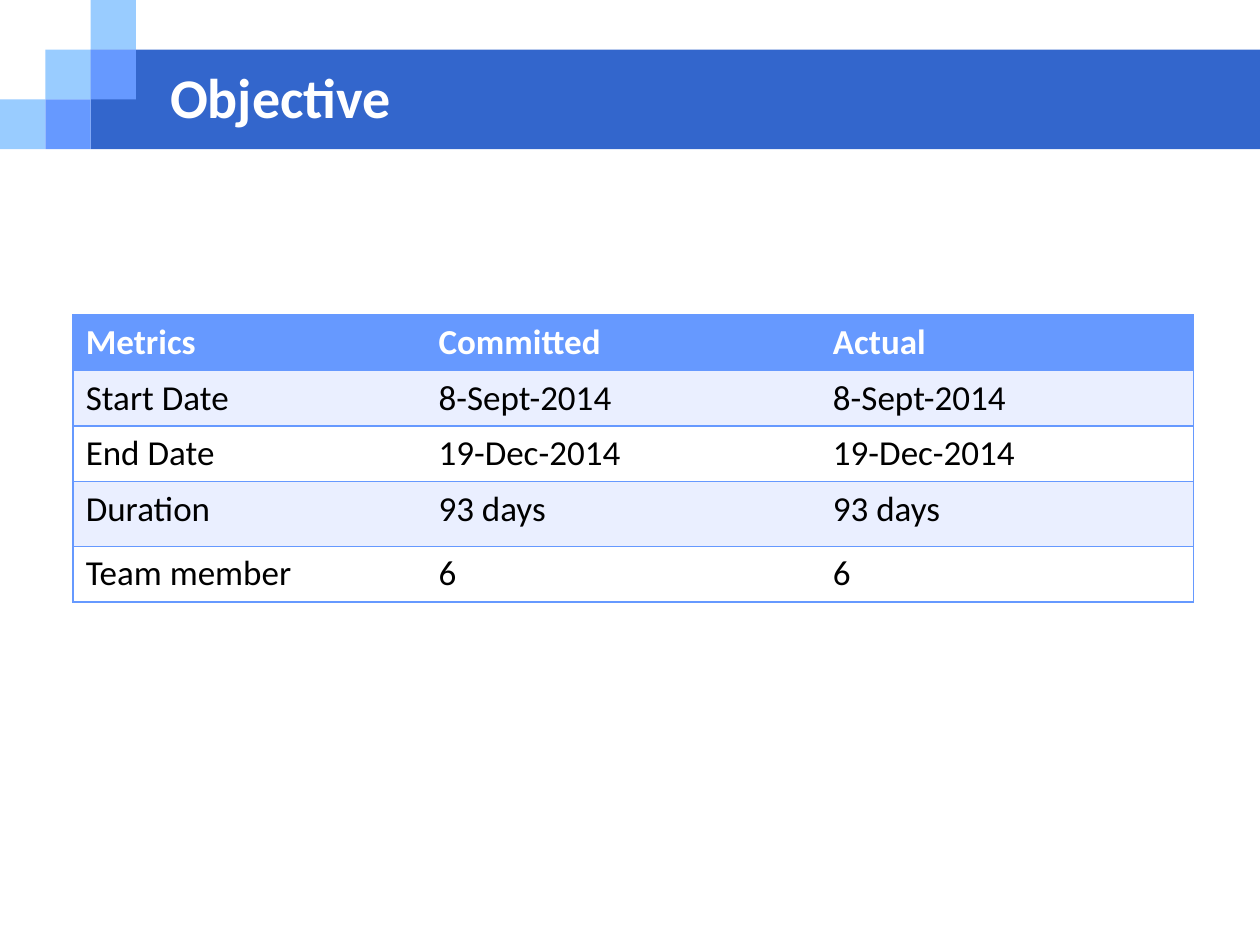
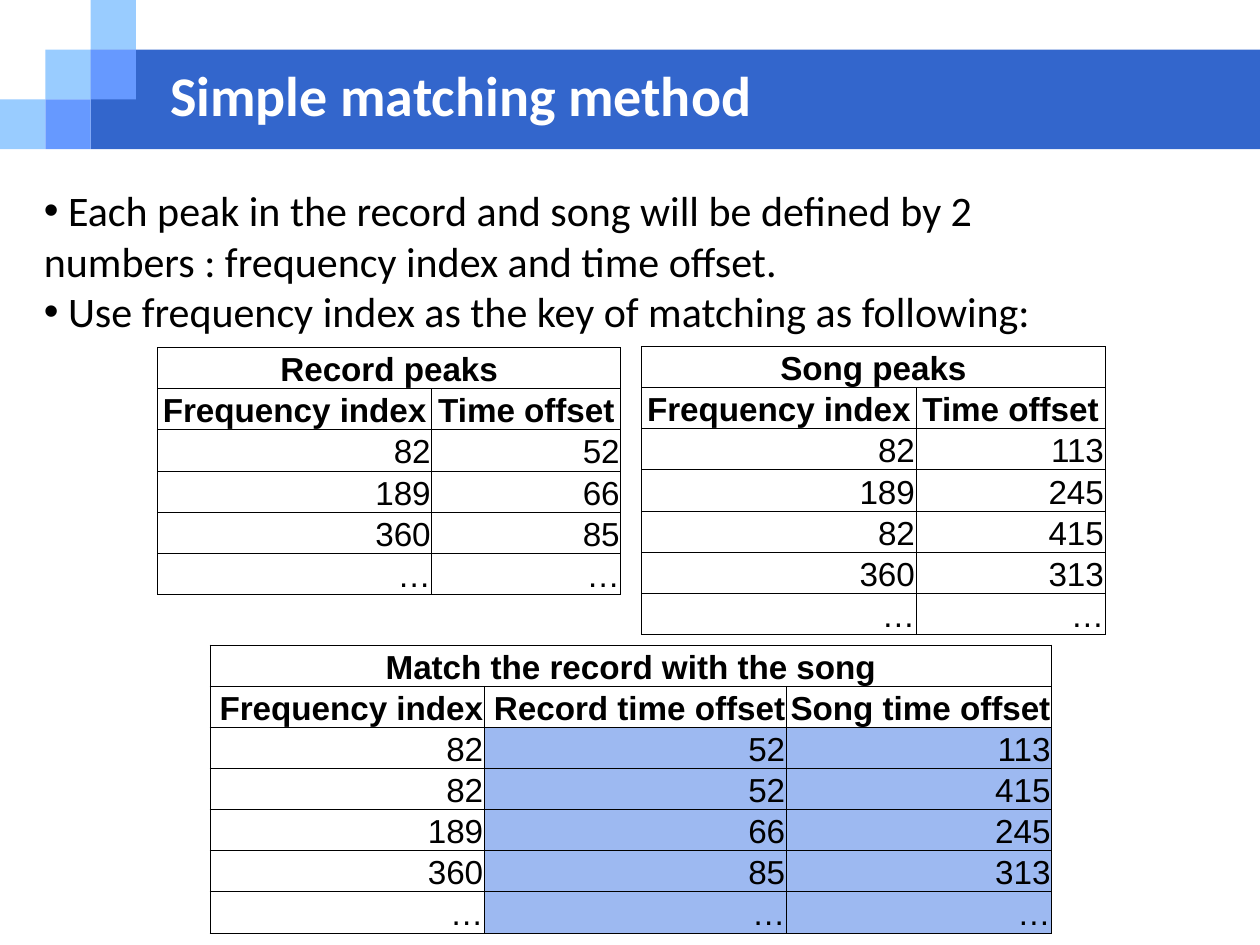
import pptx
import pptx.util
import pptx.dml.color
import pptx.enum.shapes
import pptx.enum.text
import pptx.oxml.ns
import lxml.etree
from dataclasses import dataclass

Pt = pptx.util.Pt
Hue = pptx.dml.color.RGBColor.from_string
Align = pptx.enum.text.PP_ALIGN
Hold = pptx.enum.text.MSO_ANCHOR
PLAIN = "{2D5ABB26-0587-4C30-8999-92F81FD0307C}"  # table style without grid


@dataclass(frozen=True)
class Theme:
    band: str = "3366CC"
    pale: str = "99CCFF"
    mid: str = "6699FF"
    stripe: str = "EAEFFF"
    match: str = "9DB9F1"
    white: str = "FFFFFF"
    black: str = "000000"
    main: str = "Calibri"
    data: str = "Arial"
    title: float = 32
    body: float = 24
    dates: float = 20
    peaks: float = 19


theme = Theme()


def apply(thing, form):
    for name, value in form.items():
        setattr(thing, name, value)


def style(para, face, size, hue, bold=False, align=Align.LEFT):
    para.alignment = align
    apply(para.font, {"name": face, "size": Pt(size), "bold": bold})
    para.font.color.rgb = Hue(hue)


def node(parent, tag, **attrs):
    return lxml.etree.SubElement(parent, pptx.oxml.ns.qn(tag), attrs)


# Shared header
def tile(slide, left, top, wide, high, hue):
    box = slide.shapes.add_shape(
        pptx.enum.shapes.MSO_SHAPE.RECTANGLE, Pt(left), Pt(top), Pt(wide), Pt(high))
    box.shadow.inherit = False
    box.fill.solid()
    box.fill.fore_color.rgb = Hue(hue)
    box.line.fill.background()
    return box


def header(slide, layout):
    """Draw the band and its tiles, then move them to the layout."""
    wide, high = 25.9, 28.4
    parts = [tile(slide, 2 * wide, high, 720 - 2 * wide, 2 * high, theme.band)]
    steps = [(0, 2, theme.pale), (1, 1, theme.pale), (2, 0, theme.pale),
             (2, 1, theme.mid), (1, 2, theme.mid)]
    parts += [tile(slide, col * wide, row * high, wide, high, hue)
              for col, row, hue in steps]
    for num, part in enumerate(parts):
        part.element.nvSpPr.cNvPr.set("id", str(100 + num))
        layout.shapes.element.insert(2 + num, part.element)


def title(slide, text, top, wide, high):
    head = slide.shapes.title
    apply(head, {"left": Pt(90), "top": Pt(top), "width": Pt(wide), "height": Pt(high)})
    frame = head.text_frame
    frame.text = text
    apply(frame, {"vertical_anchor": Hold.MIDDLE, "word_wrap": True,
                  "auto_size": pptx.enum.text.MSO_AUTO_SIZE.NONE})
    style(frame.paragraphs[0], theme.main, theme.title, theme.white, True)


# Text
def bullets(slide, left, top, wide, high, lines):
    frame = slide.shapes.add_textbox(Pt(left), Pt(top), Pt(wide), Pt(high)).text_frame
    frame.word_wrap = True
    frame.text = "\n".join(lines)
    for para in frame.paragraphs:
        style(para, theme.main, theme.body, theme.black)
        props = para._p.get_or_add_pPr()
        apply(props, {"marL": Pt(17), "indent": -Pt(17)})
        node(props, "a:buFont", typeface=theme.data)
        node(props, "a:buChar", char="•")


# Tables
def edge(cell, sides, hue, width):
    """Rule the given sides, named in the order L, R, T, B."""
    props = cell._tc.get_or_add_tcPr()
    for side in sides:
        line = node(props, "a:ln" + side, w=str(Pt(width)))
        node(node(line, "a:solidFill"), "a:srgbClr", val=hue)


def paint(cell, hue):
    if hue:
        cell.fill.solid()
        cell.fill.fore_color.rgb = Hue(hue)
    else:
        cell.fill.background()


def table(slide, left, top, cols, highs, rows):
    frame = slide.shapes.add_table(
        len(rows), len(cols), Pt(left), Pt(top), Pt(sum(cols)), Pt(sum(highs)))
    grid = frame.table
    apply(grid, {"first_row": False, "horz_banding": False})
    next(frame.element.iter(pptx.oxml.ns.qn("a:tableStyleId"))).text = PLAIN
    for col, wide in zip(grid.columns, cols):
        col.width = Pt(wide)
    for row, high, texts in zip(grid.rows, highs, rows):
        row.height = Pt(high)
        for cell, text in zip(row.cells, texts):
            cell.text = text
    return grid


def dates(slide, rows):
    cols = [201.6, 225.4, 213.1]
    grid = table(slide, 41.8, 180, cols, [31.6, 31.6, 31.6, 37, 31.6], rows)
    last = len(cols) - 1
    for r, row in enumerate(grid.rows):
        fill = theme.mid if r == 0 else theme.stripe if r % 2 else theme.white
        for c, cell in enumerate(row.cells):
            sides = {0: "LTB", last: "RTB"}.get(c, "TB")
            edge(cell, sides, theme.mid, 1)
            paint(cell, fill)
            style(cell.text_frame.paragraphs[0], theme.main, theme.dates,
                  theme.black if r else theme.white, r == 0)


def peaks(slide, left, top, cols, name, heads, rows, align=Align.CENTER, tint=None):
    """Table with a merged name row; tint fills the data after column one."""
    blank = [""] * (len(cols) - 1)
    dots = ["…"] * len(cols)
    lines = [[name] + blank, heads, *rows, dots]
    grid = table(slide, left, top, cols, [23.5] * len(lines), lines)
    aligns = {0: Align.CENTER, 1: align}
    inset = {"margin_left": Pt(0.7), "margin_right": Pt(0.7), "margin_top": Pt(0.7),
             "margin_bottom": 0, "vertical_anchor": Hold.BOTTOM}
    for r, row in enumerate(grid.rows):
        for c, cell in enumerate(row.cells):
            apply(cell, inset)
            edge(cell, "LRTB", theme.black, 0.5)
            paint(cell, tint if r > 1 and c else None)
            style(cell.text_frame.paragraphs[0], theme.data, theme.peaks,
                  theme.black, r < 2, aligns.get(r, Align.RIGHT))
    grid.cell(0, 0).merge(grid.cell(0, len(cols) - 1))


def main():
    deck = pptx.Presentation()
    apply(deck, {"slide_width": Pt(720), "slide_height": Pt(540)})
    layout = deck.slide_layouts.get_by_name("Title Only")

    # Objective
    goal = deck.slides.add_slide(layout)
    header(goal, layout)
    title(goal, "Objective", 36, 582, 38)
    dates(goal, [
        ["Metrics", "Committed", "Actual"],
        ["Start Date", "8-Sept-2014", "8-Sept-2014"],
        ["End Date", "19-Dec-2014", "19-Dec-2014"],
        ["Duration", "93 days", "93 days"],
        ["Team member", "6", "6"],
    ])

    # Simple matching method
    method = deck.slides.add_slide(layout)
    title(method, "Simple matching method", 12, 648, 84)
    bullets(method, 18, 102, 600, 94.5, [
        " Each peak in the record and song will be defined by 2 numbers : "
        "frequency index and time offset.",
        " Use frequency index as the key of matching as following:",
    ])
    pair, heads = [156.8, 108], ["Frequency index", "Time offset"]
    peaks(method, 90, 198.6, pair, "Record peaks", heads,
          [["82", "52"], ["189", "66"], ["360", "85"]])
    peaks(method, 366.7, 198, pair, "Song peaks", heads,
          [["82", "113"], ["189", "245"], ["82", "415"], ["360", "313"]])
    peaks(method, 120, 368.6, [156.8, 172.6, 151.6], "Match the record with the song",
          ["Frequency index", "Record time offset", "Song time offset"],
          [["82", "52", "113"], ["82", "52", "415"],
           ["189", "66", "245"], ["360", "85", "313"]],
          Align.RIGHT, theme.match)

    deck.save("out.pptx")


if __name__ == "__main__":
    main()
